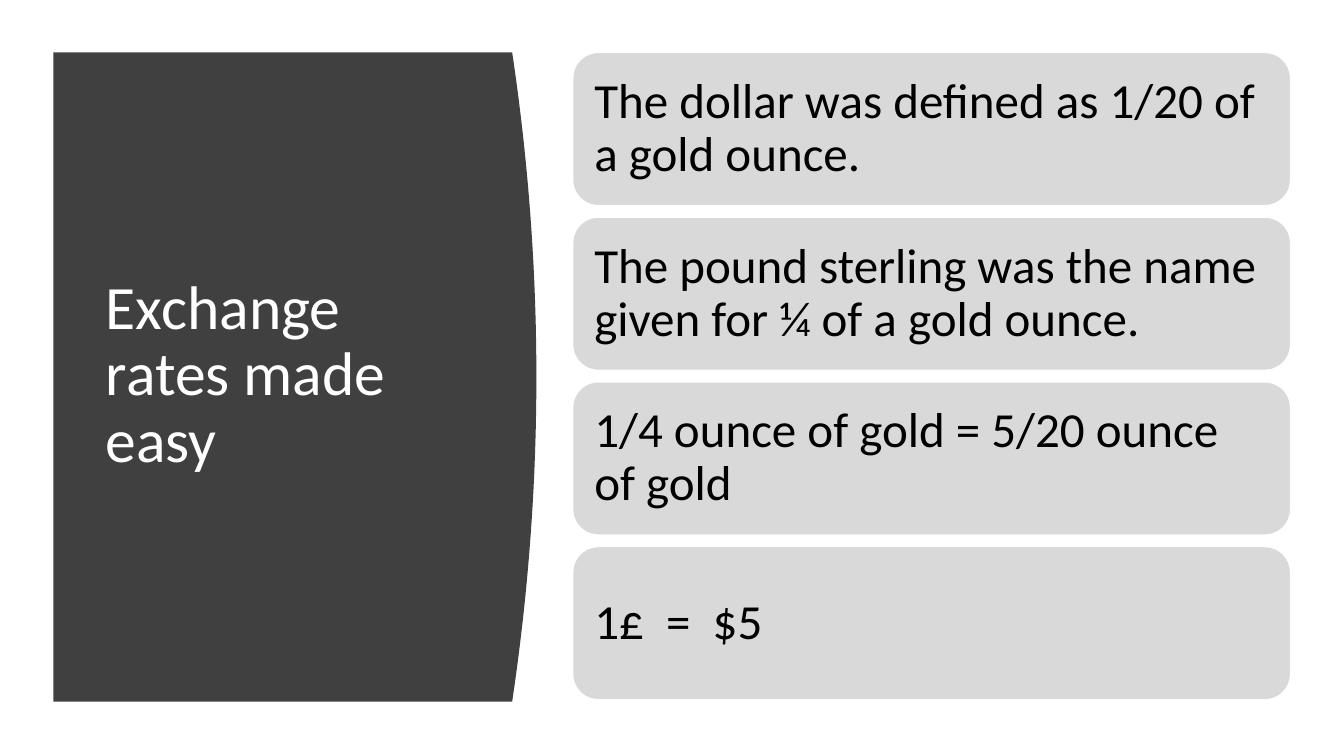
from pptx import Presentation
from pptx.dml.color import RGBColor
from pptx.enum.shapes import MSO_SHAPE
from pptx.enum.text import MSO_ANCHOR, MSO_AUTO_SIZE, PP_ALIGN
from pptx.util import Inches, Pt

ROUNDED = MSO_SHAPE.ROUNDED_RECTANGLE
MIDDLE = MSO_ANCHOR.MIDDLE
LEFT = PP_ALIGN.LEFT
NO_AUTOFIT = MSO_AUTO_SIZE.NONE

FONT = "Calibri"
WHITE, BLACK, CHARCOAL, GREY = "FFFFFF", "000000", "404040", "D9D9D9"

PANEL_LEFT, PANEL_TOP, PANEL_BOTTOM = 0.53, 0.52, 6.96
PANEL_EDGE, PANEL_BULGE, CURVE_STEPS = 5.08, 0.24, 40

CARD_LEFT, CARD_TOP, CARD_WIDTH, CARD_HEIGHT = 5.68, 0.52, 7.12, 1.52
CARD_PITCH = 1.634
FACTS = [
    "The dollar was defined as 1/20 of a gold ounce.",
    "The pound sterling was the name given for ¼ of a gold ounce.",
    "1/4 ounce of gold = 5/20 ounce of gold",
    "1£  =  $5",
]


def rgb(hex_colour):
    """Turn a hex string into a colour."""
    return RGBColor.from_string(hex_colour)


def write_text(shape, text, *, size, colour, side=0.1, vertical=0.05):
    """Put left-aligned, vertically centred text into a shape."""
    frame = shape.text_frame
    frame.word_wrap = True
    frame.auto_size = NO_AUTOFIT
    frame.vertical_anchor = MIDDLE
    frame.margin_left = frame.margin_right = Inches(side)
    frame.margin_top = frame.margin_bottom = Inches(vertical)
    paragraph = frame.paragraphs[0]
    paragraph.alignment = LEFT
    paragraph.line_spacing = 0.9
    run = paragraph.add_run()
    run.text = text
    run.font.name = FONT
    run.font.size = Pt(size)
    run.font.color.rgb = rgb(colour)


def paint(shape, fill, line=None):
    """Give a shape a flat fill and an optional thin outline."""
    shape.shadow.inherit = False
    shape.fill.solid()
    shape.fill.fore_color.rgb = rgb(fill)
    if line:
        shape.line.color.rgb = rgb(line)
        shape.line.width = Pt(1)
    else:
        shape.line.fill.background()


def add_panel(slide):
    """Draw the dark panel whose right edge bulges as a parabola."""
    half_height = (PANEL_BOTTOM - PANEL_TOP) / 2
    edge = []
    for step in range(CURVE_STEPS + 1):
        offset = 2 * step / CURVE_STEPS - 1
        x = PANEL_EDGE + PANEL_BULGE * (1 - offset ** 2)
        y = PANEL_TOP + half_height * (1 + offset)
        edge.append((Inches(x), Inches(y)))
    outline = slide.shapes.build_freeform(Inches(PANEL_LEFT), Inches(PANEL_TOP))
    outline.add_line_segments(edge + [(Inches(PANEL_LEFT), Inches(PANEL_BOTTOM))])
    paint(outline.convert_to_shape(), CHARCOAL)


def add_title(slide, text):
    """Place the title placeholder in front of the panel."""
    title = slide.shapes.title
    title.left, title.top = Inches(0.95), Inches(1.11)
    title.width, title.height = Inches(3.74), Inches(5.24)
    write_text(title, text, size=44, colour=WHITE)
    slide.shapes._spTree.append(title._element)


def add_card(slide, index, fact):
    """Add one rounded card to the column of facts."""
    card = slide.shapes.add_shape(
        ROUNDED, Inches(CARD_LEFT), Inches(CARD_TOP + index * CARD_PITCH),
        Inches(CARD_WIDTH), Inches(CARD_HEIGHT))
    paint(card, GREY, WHITE)
    write_text(card, fact, size=35, colour=BLACK, side=0.14, vertical=0.15)


def main():
    """Build and save the slide."""
    deck = Presentation()
    deck.slide_width, deck.slide_height = Inches(13.33), Inches(7.5)
    slide = deck.slides.add_slide(deck.slide_layouts.get_by_name("Title Only"))
    add_panel(slide)
    add_title(slide, "Exchange rates made easy")
    for index, fact in enumerate(FACTS):
        add_card(slide, index, fact)
    deck.save("out.pptx")


if __name__ == "__main__":
    main()
